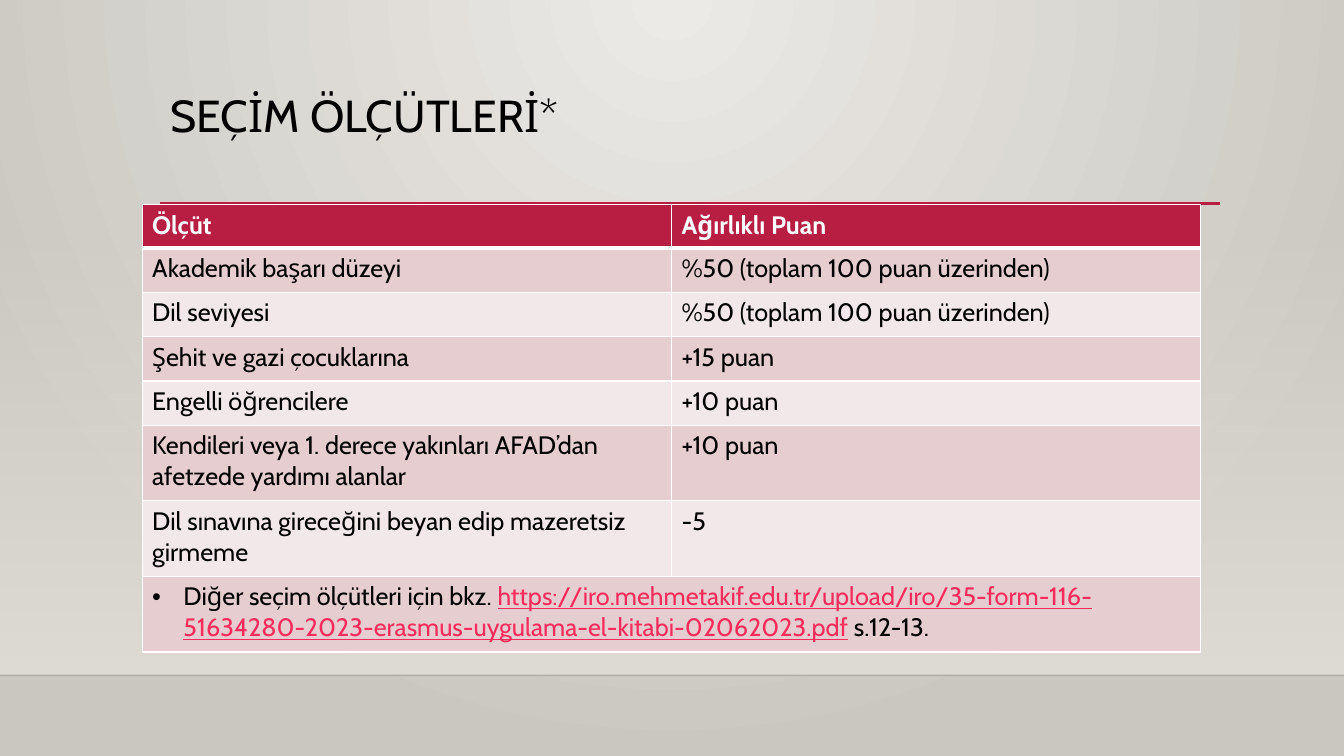
from dataclasses import dataclass

from lxml import etree
from pptx import Presentation
from pptx.dml.color import RGBColor
from pptx.enum.shapes import MSO_CONNECTOR, MSO_SHAPE
from pptx.enum.text import MSO_ANCHOR
from pptx.oxml import parse_xml
from pptx.oxml.ns import nsdecls, qn
from pptx.util import Inches, Pt

RECT = MSO_SHAPE.RECTANGLE
STRAIGHT = MSO_CONNECTOR.STRAIGHT
TOP = MSO_ANCHOR.TOP

FONT = "Cabin"
COLOR = {
    "light": "ECEAE7", "dark": "CAC7C1", "haze": "DFDBD5",
    "edge": "000001", "red": "B71E42", "link": "FA2B5C",
    "odd": "E6CDCF", "even": "F3E8E9", "black": "000000", "white": "FFFFFF",
}


@dataclass
class Row:
    label: str
    score: str
    high: float = 0.44


@dataclass
class Rule:
    left: float
    right: float
    y: float
    color: str
    width: float
    alpha: int = 100


ROWS = [
    Row("Ölçüt", "Ağırlıklı Puan", 0.43),
    Row("Akademik başarı düzeyi", "%50 (toplam 100 puan üzerinden)"),
    Row("Dil seviyesi", "%50 (toplam 100 puan üzerinden)"),
    Row("Şehit ve gazi çocuklarına", "+15 puan"),
    Row("Engelli öğrencilere", "+10 puan"),
    Row("Kendileri veya 1. derece yakınları AFAD’dan afetzede yardımı alanlar",
        "+10 puan", 0.75),
    Row("Dil sınavına gireceğini beyan edip mazeretsiz girmeme", "-5", 0.75),
    Row("Diğer seçim ölçütleri için bkz. ", "", 0.75),
]
LINK = ("https://iro.mehmetakif.edu.tr/upload/iro/35-form-116-51634280-2023-"
        "erasmus-uygulama-el-kitabi-02062023.pdf")
RULES = [
    Rule(0, 13.33, 6.7, "edge", 1, 20),
    Rule(1.59, 12.1, 2.02, "red", 2.5),
]


def rgb(name: str) -> RGBColor:
    return RGBColor.from_string(COLOR[name])


def write(para, text: str, *, size: float = 18, color: str = "black",
          bold: bool = False, under: bool = False) -> None:
    run = para.add_run()
    run.text = text
    font = run.font
    font.name, font.size = FONT, Pt(size)
    font.bold, font.underline = bold, under
    font.color.rgb = rgb(color)


def blend(fill, node, first: str, last: str, way: str, alpha: int = 100) -> None:
    fill.gradient()
    old = node.find(".//" + qn("a:gradFill"))
    new = parse_xml(
        f'<a:gradFill {nsdecls("a")} rotWithShape="1"><a:gsLst>'
        f'<a:gs pos="0"><a:srgbClr val="{COLOR[first]}">'
        f'<a:alpha val="{alpha * 1000}"/></a:srgbClr></a:gs>'
        f'<a:gs pos="100000"><a:srgbClr val="{COLOR[last]}"/></a:gs>'
        f'</a:gsLst>{way}</a:gradFill>')
    old.getparent().replace(old, new)


def draw(slide, rule: Rule) -> None:
    line = slide.shapes.add_connector(
        STRAIGHT, Inches(rule.left), Inches(rule.y),
        Inches(rule.right), Inches(rule.y))
    line.line.color.rgb = rgb(rule.color)
    line.line.width = Pt(rule.width)
    props = line.element.spPr
    if rule.alpha < 100:
        tint = props.find(".//" + qn("a:srgbClr"))
        etree.SubElement(tint, qn("a:alpha"), val=str(rule.alpha * 1000))
    etree.SubElement(props, qn("a:effectLst"))


def frame(cell, top: float, base: float) -> None:
    props = cell._tc.get_or_add_tcPr()
    sides = {"lnL": 1, "lnR": 1, "lnT": top, "lnB": base}
    for place, (side, width) in enumerate(sides.items()):
        props.insert(place, parse_xml(
            f'<a:{side} {nsdecls("a")} w="{Pt(width)}"><a:solidFill>'
            f'<a:srgbClr val="{COLOR["white"]}"/></a:solidFill></a:{side}>'))


def bullet(para, indent: float) -> None:
    props = para._p.get_or_add_pPr()
    props.set("marL", str(Inches(indent)))
    props.set("indent", str(-Inches(indent)))
    etree.SubElement(props, qn("a:buFont"), typeface="Arial")
    etree.SubElement(props, qn("a:buChar"), char="•")


def fill_table(slide) -> None:
    high = sum(row.high for row in ROWS)
    table = slide.shapes.add_table(
        len(ROWS), 2, Inches(1.41), Inches(2.03),
        Inches(10.5), Inches(high)).table
    table.first_row = table.horz_banding = False
    for col in table.columns:
        col.width = Inches(5.25)
    for num, row in enumerate(ROWS):
        table.rows[num].height = Inches(row.high)
        head = num == 0
        shade = "red" if head else "odd" if num % 2 else "even"
        for col, text in enumerate((row.label, row.score)):
            cell = table.cell(num, col)
            cell.fill.solid()
            cell.fill.fore_color.rgb = rgb(shade)
            frame(cell, 3 if num == 1 else 1, 3 if head else 1)
            if text:
                write(cell.text_frame.paragraphs[0], text, bold=head,
                      color="white" if head else "black")
    last = len(ROWS) - 1
    note = table.cell(last, 0)
    note.merge(table.cell(last, 1))
    para = note.text_frame.paragraphs[0]
    bullet(para, 0.31)
    write(para, LINK, color="link", under=True)
    write(para, " s.12-13.")


def main() -> None:
    deck = Presentation()
    deck.slide_width, deck.slide_height = Inches(13.33), Inches(7.5)
    slide = deck.slides.add_slide(deck.slide_layouts[6])
    blend(slide.background.fill, slide.element, "light", "dark",
          '<a:path path="circle"><a:fillToRect l="43000" t="0" '
          'r="43000" b="100000"/></a:path>')

    haze = slide.shapes.add_shape(
        RECT, Inches(0), Inches(2.21), Inches(13.33), Inches(4.49))
    haze.shadow.inherit = False
    haze.line.fill.background()
    blend(haze.fill, haze.element, "haze", "haze",
          '<a:lin ang="5400000" scaled="0"/>', alpha=0)

    for rule in RULES:
        draw(slide, rule)

    title = slide.shapes.add_textbox(
        Inches(1.59), Inches(0.88), Inches(10.5), Inches(1.15)).text_frame
    title.word_wrap = True
    title.vertical_anchor = TOP
    para = title.paragraphs[0]
    para.line_spacing = 0.9
    write(para, "SEÇİM ÖLÇÜTLERİ*", size=32)

    fill_table(slide)
    deck.save("out.pptx")


if __name__ == "__main__":
    main()
